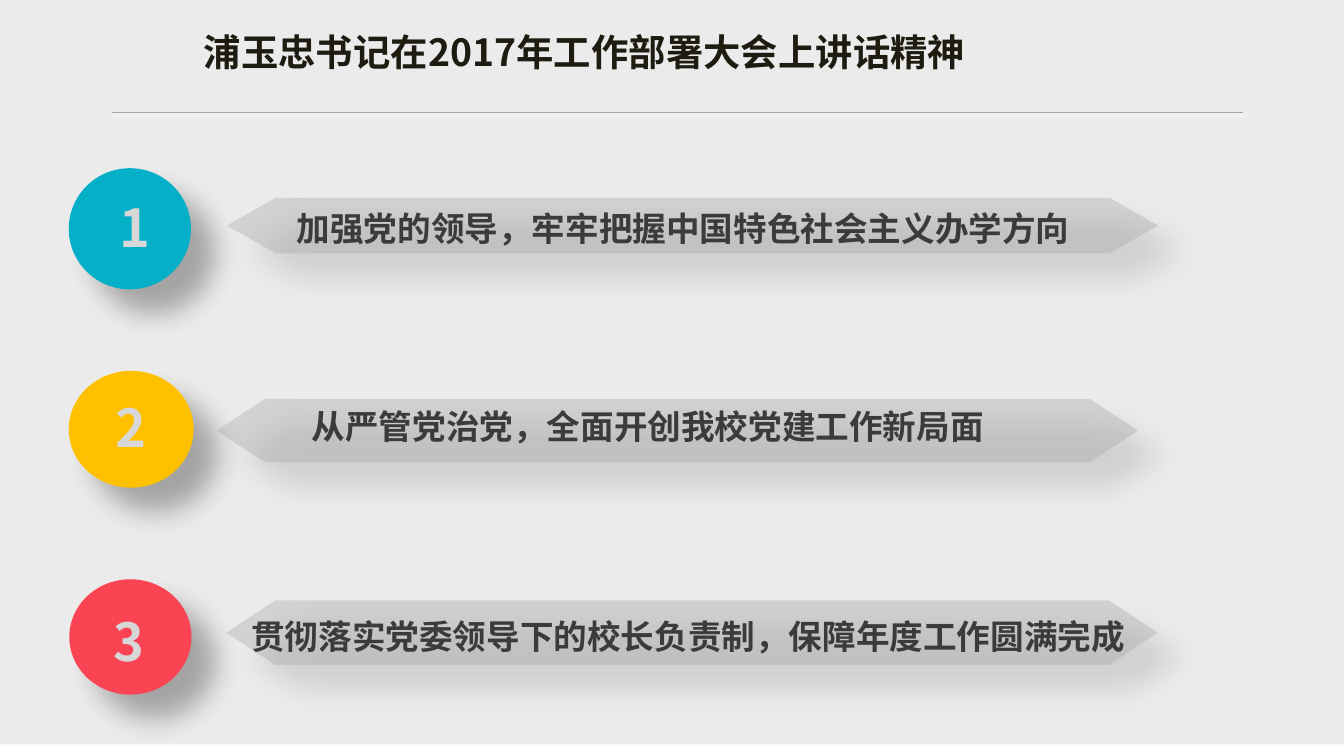
from dataclasses import dataclass

import lxml.etree
import pptx
import pptx.dml.color
import pptx.enum.shapes
import pptx.enum.text
import pptx.oxml.ns
import pptx.util

Cm = pptx.util.Cm
SHAPE = pptx.enum.shapes.MSO_SHAPE
ALIGN = pptx.enum.text.PP_ALIGN
HEADING_FONT = "Noto Sans CJK SC"
BODY_FONT = "Calibri"
BAR_TIP = 0.92


@dataclass
class Box:
    """A rectangle in centimetres."""
    left: float
    top: float
    width: float
    height: float

    def lengths(self):
        return Cm(self.left), Cm(self.top), Cm(self.width), Cm(self.height)


@dataclass
class Item:
    number: str
    text: str
    color: str
    circle: Box
    number_box: Box
    bar: Box
    text_top: float
    indent: float


ITEMS = [
    Item("1", "加强党的领导，牢牢把握中国特色社会主义办学方向", "05AFC8",
         Box(1.3, 3.18, 2.31, 2.29), Box(1.75, 3.56, 1.6, 1.73),
         Box(4.29, 3.74, 17.6, 1.05), 3.81, 0.86),
    Item("2", "从严管党治党，全面开创我校党建工作新局面", "FFC000",
         Box(1.3, 7.01, 2.36, 2.21), Box(1.68, 7.34, 1.6, 1.45),
         Box(4.09, 7.54, 17.42, 1.2), 7.54, 1.14),
    Item("3", "贯彻落实党委领导下的校长负责制，保障年度工作圆满完成", "FA4453",
         Box(1.31, 10.95, 2.31, 2.18), Box(1.73, 11.4, 1.42, 1.45),
         Box(4.28, 11.35, 17.6, 1.22), 11.51, 0),
]


def rgb(color: str):
    return pptx.dml.color.RGBColor.from_string(color)


def add_child(parent, tag: str, **attributes):
    child = lxml.etree.SubElement(parent, pptx.oxml.ns.qn(tag))
    for name, value in attributes.items():
        child.set(name, str(value))
    return child


def add_shadow(shape, color: str, opacity: int, blur: float, distance: float, angle: int):
    effects = add_child(shape._element.spPr, "a:effectLst")
    shadow = add_child(effects, "a:outerShdw", blurRad=pptx.util.Pt(blur),
                       dist=pptx.util.Pt(distance), dir=angle * 60000,
                       algn="tl", rotWithShape=0)
    tint = add_child(shadow, "a:srgbClr", val=color)
    add_child(tint, "a:alpha", val=opacity * 1000)


def paint(shape, color: str, opacity: int = 100):
    shape.fill.solid()
    shape.fill.fore_color.rgb = rgb(color)
    shape.line.fill.background()
    if opacity < 100:
        tint = shape._element.spPr.find(".//" + pptx.oxml.ns.qn("a:srgbClr"))
        add_child(tint, "a:alpha", val=opacity * 1000)


def add_text(page, box: Box, text: str, size: int, font: str, color: str,
             align=ALIGN.LEFT, indent: float = 0):
    frame = page.shapes.add_textbox(*box.lengths()).text_frame
    frame.word_wrap = True
    frame.margin_left = Cm(0.25 + indent)
    para = frame.paragraphs[0]
    para.text = text
    para.alignment = align
    para.font.size = pptx.util.Pt(size)
    para.font.name = font
    para.font.bold = True
    para.font.color.rgb = rgb(color)


def add_circle(page, item: Item):
    circle = page.shapes.add_shape(SHAPE.FLOWCHART_CONNECTOR, *item.circle.lengths())
    paint(circle, item.color)
    add_shadow(circle, "000000", 30, 15, 18, 45)


def add_bar(page, box: Box):
    right, bottom = box.left + box.width, box.top + box.height
    middle = box.top + box.height / 2
    corners = [(right - BAR_TIP, box.top), (right, middle), (right - BAR_TIP, bottom),
               (box.left + BAR_TIP, bottom), (box.left, middle)]
    builder = page.shapes.build_freeform(Cm(box.left + BAR_TIP), Cm(box.top))
    builder.add_line_segments([(Cm(x), Cm(y)) for x, y in corners], close=True)
    bar = builder.convert_to_shape()
    paint(bar, "A6A6A6", 36)
    add_shadow(bar, "000000", 30, 15, 18, 45)


def main():
    deck = pptx.Presentation()
    deck.slide_width, deck.slide_height = Cm(25.4), Cm(14.29)
    page = deck.slides.add_slide(deck.slide_layouts[6])

    # Grey backdrop
    backdrop = page.shapes.add_shape(SHAPE.RECTANGLE, *Box(0, -0.05, 25.4, 14.12).lengths())
    paint(backdrop, "000000", 8)
    backdrop.shadow.inherit = False

    # Rule under the title
    rule = page.shapes.add_connector(pptx.enum.shapes.MSO_CONNECTOR.STRAIGHT,
                                     Cm(2.11), Cm(2.13), Cm(23.5), Cm(2.13))
    rule.line.color.rgb = rgb("A6A6A6")
    rule.line.width = pptx.util.Pt(0.75)
    add_shadow(rule, "FFFFFF", 100, 1, 1, 90)

    # Numbered items: circles and wording below, numbers and translucent bars above
    for item in ITEMS:
        add_circle(page, item)
    for item in ITEMS:
        add_text(page, Box(4.5, item.text_top, 18, 1.03), item.text, 18, BODY_FONT,
                 "000000", indent=item.indent)
    for item in ITEMS:
        add_text(page, item.number_box, item.number, 28, HEADING_FONT, "D7D7D7", ALIGN.CENTER)
        add_bar(page, item.bar)

    # Title
    add_text(page, Box(2.49, 0.43, 17.12, 1.12), "浦玉忠书记在2017年工作部署大会上讲话精神",
             20, HEADING_FONT, "1E1C11", ALIGN.CENTER)

    deck.save("out.pptx")


if __name__ == "__main__":
    main()
